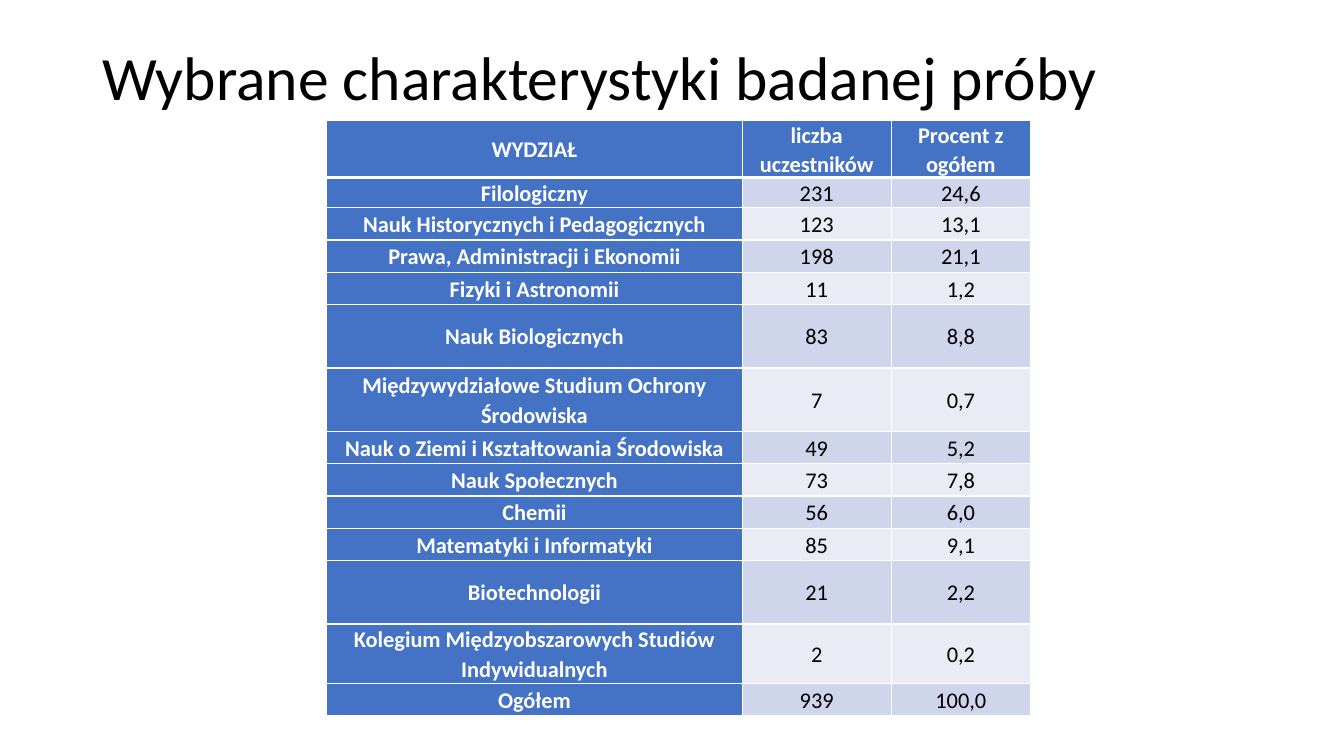
from lxml.etree import SubElement as Sub
from pptx import Presentation
from pptx.dml.color import RGBColor as RGB
from pptx.enum.text import MSO_ANCHOR as Anchor, PP_ALIGN as Align
from pptx.oxml.ns import qn
from pptx.util import Inches, Pt

WIDE, HIGH = Inches(13.33), Inches(7.5)
FONT = "Calibri"
COLORS = {"head": "4472C4", "odd": "CFD5EA", "even": "E9EBF5",
          "light": "FFFFFF", "dark": "000000"}

# Column widths and row heights, in percent of the slide
COLS = [30.91, 11.1, 10.35]
LINE, TALL = 4.27, 8.4
ROWS = [
    (7.33, "WYDZIAŁ", "liczba uczestników", "Procent z ogółem"),
    (4, "Filologiczny", "231", "24,6"),
    (LINE, "Nauk Historycznych i Pedagogicznych", "123", "13,1"),
    (LINE, "Prawa, Administracji i Ekonomii", "198", "21,1"),
    (LINE, "Fizyki i Astronomii", "11", "1,2"),
    (TALL, "Nauk Biologicznych", "83", "8,8"),
    (TALL, "Międzywydziałowe Studium Ochrony Środowiska", "7", "0,7"),
    (LINE, "Nauk o Ziemi i Kształtowania Środowiska", "49", "5,2"),
    (LINE, "Nauk Społecznych", "73", "7,8"),
    (LINE, "Chemii", "56", "6,0"),
    (LINE, "Matematyki i Informatyki", "85", "9,1"),
    (TALL, "Biotechnologii", "21", "2,2"),
    (7.87, "Kolegium Międzyobszarowych Studiów Indywidualnych", "2", "0,2"),
    (LINE, "Ogółem", "939", "100,0"),
]


def across(share):
    return int(WIDE * share / 100)


def down(share):
    return int(HIGH * share / 100)


def style(para, size, color, bold=False):
    font = para.font
    font.name, font.size, font.bold = FONT, Pt(size), bold
    font.color.rgb = RGB.from_string(COLORS[color])


def add_title(slide, text):
    box = slide.shapes.add_textbox(across(6.89), down(5.33),
                                   across(86.27), down(10.53))
    frame = box.text_frame
    frame.word_wrap = True
    frame.vertical_anchor = Anchor.MIDDLE
    para = frame.paragraphs[0]
    para.text = text
    para.line_spacing = 0.9
    style(para, 44, "dark")


def add_edges(cell, top, bottom):
    props = cell._tc.get_or_add_tcPr()
    for side, width in (("L", 1), ("R", 1), ("T", top), ("B", bottom)):
        line = Sub(props, qn(f"a:ln{side}"), w=str(Pt(width)))
        fill = Sub(line, qn("a:solidFill"))
        Sub(fill, qn("a:srgbClr"), val=COLORS["light"])


def fill_cell(cell, text, row, col):
    head = row == 0 or col == 0
    add_edges(cell, 3 if row == 1 else 1, 3 if row == 0 else 1)
    shade = "head" if head else "odd" if row % 2 else "even"
    cell.fill.solid()
    cell.fill.fore_color.rgb = RGB.from_string(COLORS[shade])
    cell.margin_left = cell.margin_right = Inches(0.05)
    cell.margin_top = cell.margin_bottom = 0
    cell.vertical_anchor = Anchor.MIDDLE
    para = cell.text_frame.paragraphs[0]
    para.text = text
    para.alignment = Align.CENTER
    para.line_spacing = 1.07
    para.space_after = Pt(8)
    style(para, 16, "light" if head else "dark", head)


def add_grid(slide):
    high = down(sum(row[0] for row in ROWS))
    table = slide.shapes.add_table(len(ROWS), len(COLS), across(24.31),
                                   down(15.87), across(sum(COLS)), high).table
    table.horz_banding = False
    for col, share in enumerate(COLS):
        table.columns[col].width = across(share)
    for row, (share, *texts) in enumerate(ROWS):
        table.rows[row].height = down(share)
        for col, text in enumerate(texts):
            fill_cell(table.cell(row, col), text, row, col)


def main():
    deck = Presentation()
    deck.slide_width, deck.slide_height = WIDE, HIGH
    slide = deck.slides.add_slide(deck.slide_layouts[6])
    add_title(slide, "Wybrane charakterystyki badanej próby")
    add_grid(slide)
    deck.save("out.pptx")


if __name__ == "__main__":
    main()
